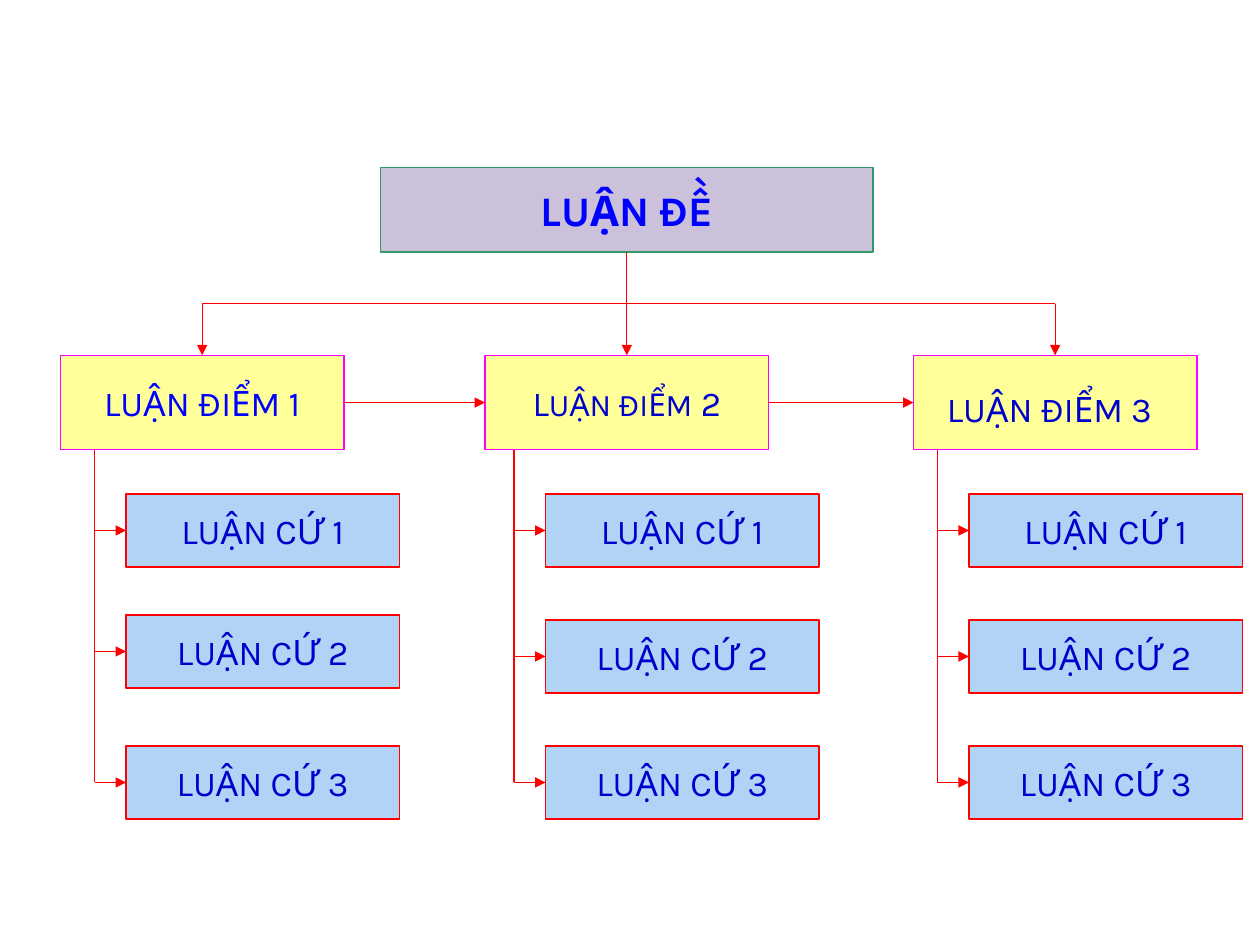
from lxml import etree
from pptx import Presentation
from pptx.dml.color import RGBColor
from pptx.enum.shapes import MSO_CONNECTOR, MSO_SHAPE
from pptx.enum.text import MSO_ANCHOR, PP_ALIGN
from pptx.oxml.ns import qn
from pptx.util import Inches, Pt

RECTANGLE = MSO_SHAPE.RECTANGLE
STRAIGHT = MSO_CONNECTOR.STRAIGHT
MIDDLE = MSO_ANCHOR.MIDDLE
CENTER = PP_ALIGN.CENTER
TOP, LEFT, BOTTOM, RIGHT = range(4)

LILAC = RGBColor(0xCC, 0xC1, 0xDA)
GREEN = RGBColor(0x33, 0x99, 0x66)
YELLOW = RGBColor(0xFF, 0xFF, 0x99)
MAGENTA = RGBColor(0xFF, 0x00, 0xFF)
SKY = RGBColor(0xB1, 0xD3, 0xF5)
RED = RGBColor(0xFF, 0x00, 0x00)
BLUE = RGBColor(0x00, 0x00, 0xFF)
DARK_BLUE = RGBColor(0x00, 0x00, 0xCC)
LINE_WIDTH = Pt(0.75)

prs = Presentation()
prs.slide_width, prs.slide_height = Inches(10), Inches(7.5)
slide = prs.slides.add_slide(prs.slide_layouts[6])


def add_box(runs, left, top, width, height, *, fill, line, color=DARK_BLUE, bold=False):
    """Add a filled rectangle; runs is a list of (text, point size)."""
    box = slide.shapes.add_shape(
        RECTANGLE, Inches(left), Inches(top), Inches(width), Inches(height))
    box.shadow.inherit = False
    box.fill.solid()
    box.fill.fore_color.rgb = fill
    box.line.color.rgb = line
    box.line.width = LINE_WIDTH
    frame = box.text_frame
    frame.word_wrap = False
    frame.vertical_anchor = MIDDLE
    paragraph = frame.paragraphs[0]
    paragraph.alignment = CENTER
    for text, size in runs:
        run = paragraph.add_run()
        run.text = text
        run.font.name = "Karla"
        run.font.size = Pt(size)
        run.font.bold = bold
        run.font.color.rgb = color
    return box


def add_line(x1, y1, x2, y2, *, start=None, end=None, arrow=True):
    """Draw a red line; start and end are (shape, side) pairs to join."""
    connector = slide.shapes.add_connector(STRAIGHT, x1, y1, x2, y2)
    if start:
        connector.begin_connect(*start)
    if end:
        connector.end_connect(*end)
    connector.line.color.rgb = RED
    connector.line.width = LINE_WIDTH
    if arrow:
        etree.SubElement(connector.line._get_or_add_ln(), qn("a:tailEnd"), type="triangle")
    etree.SubElement(connector._element.spPr, qn("a:effectLst"))


thesis = add_box([("LUẬN ĐỀ", 24)], 3.02, 1.33, 3.91, 0.67,
                 fill=LILAC, line=GREEN, color=BLUE, bold=True)

# Main points, each with the left edge of its arguments
columns = [
    (0.48, 1.0, [("LUẬN ĐIỂM 1", 20)], BLUE),
    (3.85, 4.33, [("L", 20), ("UẬN ĐIỂM", 18), (" 2", 20)], DARK_BLUE),
    (7.25, 7.69, [("LUẬN ĐIỂM 3", 20), (" ", 28)], DARK_BLUE),
]
points = []
for point_left, argument_left, runs, color in columns:
    point = add_box(runs, point_left, 2.82, 2.25, 0.75,
                    fill=YELLOW, line=MAGENTA, color=color)
    points.append(point)

    trunk_x = Inches(argument_left - 0.25)
    second_top = 4.88 if point is points[0] else 4.92
    for number, top in enumerate((3.92, second_top, 5.92), start=1):
        argument = add_box([(f"LUẬN CỨ {number}", 20)], argument_left, top, 2.17, 0.58,
                           fill=SKY, line=RED)
        branch_y = argument.top + argument.height // 2
        add_line(trunk_x, branch_y, argument.left, branch_y, end=(argument, LEFT))
    add_line(trunk_x, point.top + point.height, trunk_x, branch_y, arrow=False)

# Thesis to main points, through a horizontal bar
bar_y = Inches(2.41)
centers = [point.left + point.width // 2 for point in points]
add_line(centers[1], thesis.top + thesis.height, centers[1], bar_y,
         start=(thesis, BOTTOM), arrow=False)
add_line(centers[0], bar_y, centers[-1], bar_y, arrow=False)
for point, center in zip(points, centers):
    add_line(center, bar_y, center, point.top, end=(point, TOP))

# Each main point leads to the next
for point, following in zip(points, points[1:]):
    middle_y = point.top + point.height // 2
    add_line(point.left + point.width, middle_y, following.left, middle_y,
             start=(point, RIGHT), end=(following, LEFT))

prs.save("out.pptx")
